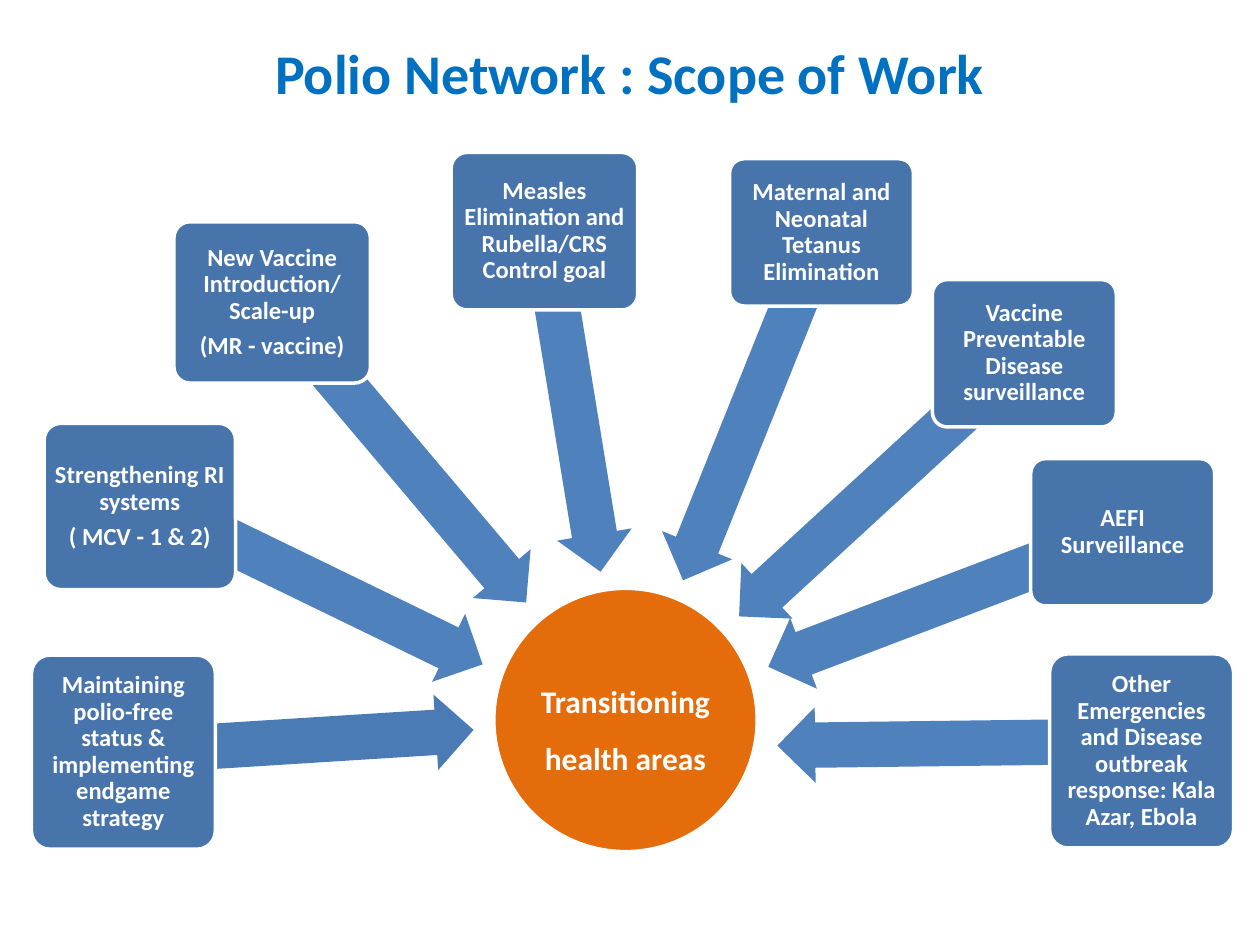
import dataclasses

import pptx
import pptx.dml.color
import pptx.enum.shapes
import pptx.enum.text
import pptx.util

Pt = pptx.util.Pt
SHAPES = pptx.enum.shapes.MSO_SHAPE


@dataclasses.dataclass(frozen=True)
class Theme:
    font: str = "Calibri"
    white: str = "FFFFFF"
    title: str = "0070C0"
    hub: str = "E46C0A"
    box: str = "4774AB"
    arrow: str = "4F81BD"
    first_arrow: str = "4B7BB5"
    title_size: float = 32
    hub_size: float = 18
    box_size: float = 14
    border: float = 2


THEME = Theme()
ARROW_HEIGHT = 43.2

# Box: left, top, width, height. Arrow: left, top, length, rotation.
AREAS = [
    (["Maintaining polio-free status & implementing endgame strategy"],
     (18, 374.4, 105.1, 110.9), (70.6, 401.8, 200.2, 176.4)),
    (["Strengthening RI systems", "( MCV - 1 & 2)"],
     (25.2, 241.9, 109.4, 95), (71.3, 311, 215.3, 205.9)),
    (["New Vaccine Introduction/ Scale-up", "(MR - vaccine)"],
     (99.4, 126.7, 112.3, 92.2), (115.9, 236.9, 224.6, 229.8)),
    (["Measles Elimination and Rubella/CRS Control goal"],
     (257.8, 87.1, 106.6, 90), (229, 208.1, 196.6, 260.7)),
    (["Maternal and Neonatal Tetanus Elimination"],
     (416.9, 90.7, 105.1, 84.2), (331.2, 222.5, 188.6, 291.9)),
    (["Vaccine Preventable Disease surveillance"],
     (532.8, 159.8, 105.1, 84.2), (393.1, 255.6, 221.8, 317.4)),
    (["AEFI Surveillance"],
     (589, 262.1, 105.1, 84.2), (432, 321.1, 216, 339.2)),
    (["Other Emergencies and Disease outbreak response: Kala Azar, Ebola"],
     (599.8, 373.7, 105.1, 110.9), (444.2, 403.2, 208.1, 359.3)),
]


def rgb(value):
    return pptx.dml.color.RGBColor.from_string(value)


def set_values(target, values):
    for name, value in values.items():
        setattr(target, name, value)


def write_text(shape, lines, size, color, inset=0, spacing=1.0, after=0):
    frame = shape.text_frame
    margins = ("margin_left", "margin_top", "margin_right", "margin_bottom")
    set_values(frame, dict.fromkeys(margins, Pt(inset)))
    set_values(frame, {
        "word_wrap": True,
        "vertical_anchor": pptx.enum.text.MSO_ANCHOR.MIDDLE,
    })
    for index, line in enumerate(lines):
        paragraph = frame.add_paragraph() if index else frame.paragraphs[0]
        set_values(paragraph, {
            "alignment": pptx.enum.text.PP_ALIGN.CENTER,
            "line_spacing": spacing,
            "space_after": Pt(after),
        })
        run = paragraph.add_run()
        run.text = line
        set_values(run.font, {"name": THEME.font, "size": Pt(size), "bold": True})
        run.font.color.rgb = rgb(color)


def add_filled(slide, kind, bounds, fill, border=None):
    shape = slide.shapes.add_shape(kind, *map(Pt, bounds))
    shape.shadow.inherit = False
    shape.fill.solid()
    shape.fill.fore_color.rgb = rgb(fill)
    if border:
        shape.line.color.rgb = rgb(border)
        shape.line.width = Pt(THEME.border)
    else:
        shape.line.fill.background()
    return shape


def add_title(slide, text):
    title = slide.shapes.add_textbox(Pt(0), Pt(5.8), Pt(720), Pt(71.3))
    write_text(title, [text], THEME.title_size, THEME.title)


def add_hub(slide, text):
    hub = add_filled(slide, SHAPES.OVAL, (282.2, 336.2, 150.5, 150.5),
                     THEME.hub, THEME.white)
    write_text(hub, [text], THEME.hub_size, THEME.white,
               inset=0.7, spacing=1.5, after=6.3)


def add_arrow(slide, left, top, length, rotation, color):
    arrow = add_filled(slide, SHAPES.LEFT_ARROW,
                       (left, top, length, ARROW_HEIGHT), color)
    arrow.adjustments[0] = 0.6
    arrow.adjustments[1] = 0.5
    arrow.rotation = rotation


def add_box(slide, lines, bounds):
    box = add_filled(slide, SHAPES.ROUNDED_RECTANGLE, bounds,
                     THEME.box, THEME.white)
    box.adjustments[0] = 0.1
    write_text(box, lines, THEME.box_size, THEME.white,
               inset=2.1, spacing=0.9, after=4.9)


def main():
    presentation = pptx.Presentation()
    set_values(presentation, {"slide_width": Pt(720), "slide_height": Pt(540)})
    slide = presentation.slides.add_slide(presentation.slide_layouts[6])

    # Title and central circle
    add_title(slide, "Polio Network : Scope of Work")
    add_hub(slide, "Transitioning health areas")

    # Health areas, each with its arrow towards the centre
    for index, (lines, bounds, arrow) in enumerate(AREAS):
        color = THEME.arrow if index else THEME.first_arrow
        add_arrow(slide, *arrow, color)
        add_box(slide, lines, bounds)

    presentation.save("out.pptx")


if __name__ == "__main__":
    main()
